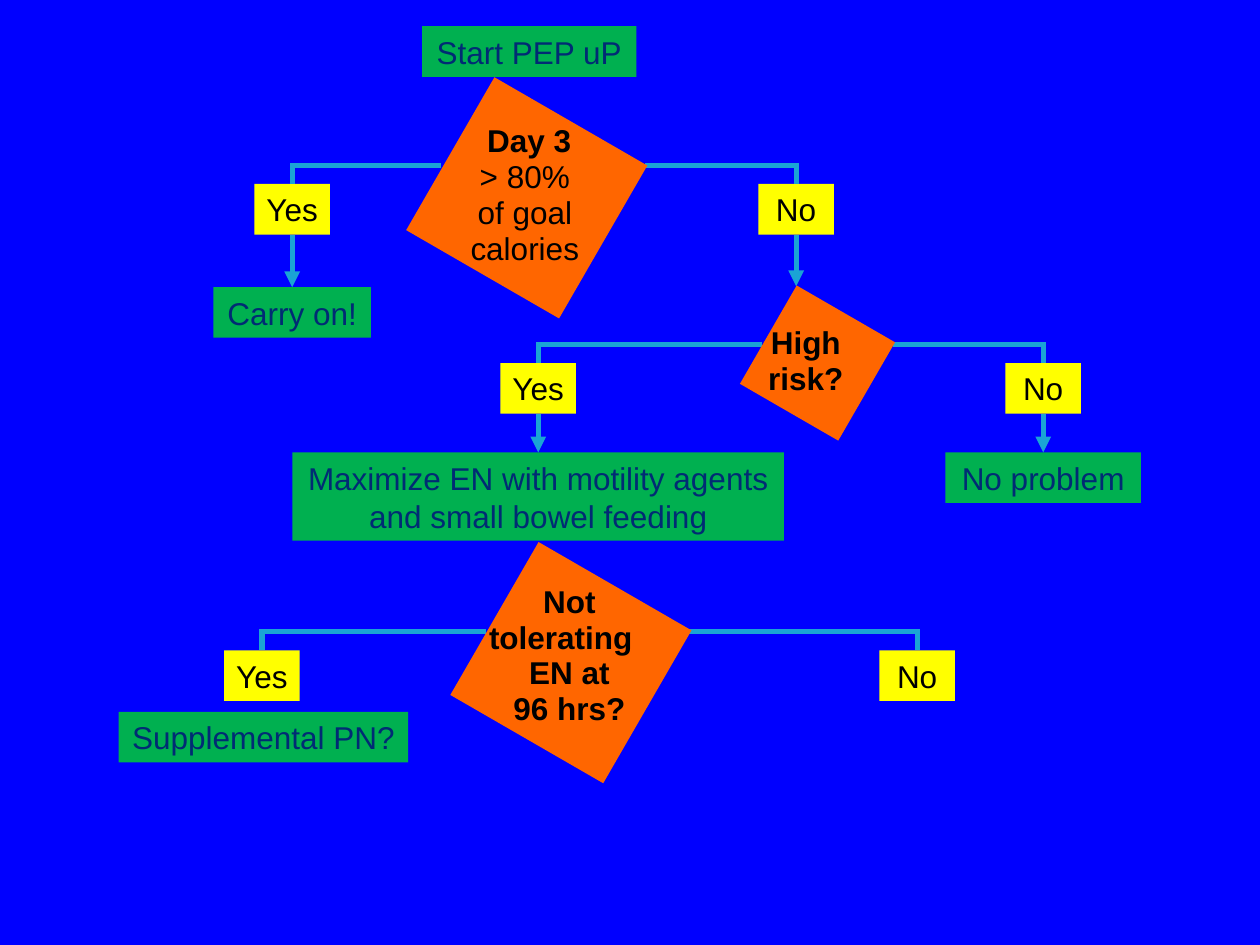
import pptx
import pptx.dml.color
import pptx.enum.shapes
import pptx.enum.text
import pptx.oxml
import pptx.oxml.ns
import pptx.util

Cm, Pt = pptx.util.Cm, pptx.util.Pt
RECTANGLE = pptx.enum.shapes.MSO_SHAPE.RECTANGLE
STRAIGHT = pptx.enum.shapes.MSO_CONNECTOR.STRAIGHT
TOP, BOTTOM = 0, 2

THEME = {
    "background": "0000FF", "step": "00B050", "answer": "FFFF00",
    "decision": "FF6600", "line": "1AA4D5",
    "step_text": "012B74", "text": "000000",
    "font": "Arial", "size": Pt(18), "line_width": Pt(3),
}

# Lengths in centimetres. Steps: centre x, top, width, height, text
STEPS = {
    "start": (10.67, 0.53, 4.32, 1.02, "Start PEP uP"),
    "carry on": (5.89, 5.79, 3.18, 1.02, "Carry on!"),
    "maximize": (10.85, 9.12, 9.91, 1.78,
                 "Maximize EN with motility agents\nand small bowel feeding"),
    "no problem": (21.03, 9.12, 3.94, 1.02, "No problem"),
    "supplement": (5.31, 14.35, 5.84, 1.02, "Supplemental PN?"),
}

# Lines of a decision: text, bold, right indent
# Branches: answer, its centre x, x where the line leaves the decision, next step
DECISIONS = [
    {"centre": (10.62, 3.99), "side": 3.56, "label": (10.67, 3.95, 3.76, 3.53),
     "lines": [("Day 3", True, 0), ("> 80%", False, 0.18),
               ("of goal calories", False, 0)],
     "answer_top": 3.71,
     "branches": [("Yes", 5.89, 8.89, "carry on"), ("No", 16.05, 13, "high risk")]},
    {"centre": (16.48, 7.32), "side": 2.29, "label": (16.51, 7.3, 3.76, 2.01),
     "lines": [("High", True, 0.53), ("risk?", True, 0)],
     "answer_top": 7.32,
     "branches": [("Yes", 10.85, 15.37, "maximize"), ("No", 21.03, 18.01, "no problem")]},
    {"centre": (11.51, 13.36), "side": 3.56, "label": (11.57, 13.23, 4.65, 2.95),
     "lines": [("Not", True, 0.18), ("tolerating", True, 0.53),
               ("EN at", True, 0.18), ("96 hrs?", True, 0)],
     "answer_top": 13.11,
     "branches": [("Yes", 5.28, 9.8, None), ("No", 18.49, 13.89, None)]},
]
ANSWER_WIDTH, ANSWER_HEIGHT = 1.52, 1.02
BRANCH_RISE = 0.38
CORNER_OVERLAP = 0.05
HIGH_RISK_TOP = 5.77


def color(name):
    return pptx.dml.color.RGBColor.from_string(THEME[name])


def style_text(para, text, text_color, bold=False):
    para.text = text
    para.alignment = pptx.enum.text.PP_ALIGN.CENTER
    for name, value in {"name": THEME["font"], "size": THEME["size"], "bold": bold}.items():
        for span in para.runs:
            setattr(span.font, name, value)
    for span in para.runs:
        span.font.color.rgb = color(text_color)


def add_box(page, center_x, top, width, height, fill):
    box = page.shapes.add_shape(
        RECTANGLE, Cm(center_x - width / 2), Cm(top), Cm(width), Cm(height))
    box.shadow.inherit = False
    box.fill.solid()
    box.fill.fore_color.rgb = color(fill)
    box.line.fill.background()
    return box


def add_text_box(page, center_x, top, width, height, fill, text, text_color):
    box = add_box(page, center_x, top, width, height, fill)
    box.text_frame.word_wrap = False
    box.text_frame.vertical_anchor = pptx.enum.text.MSO_ANCHOR.MIDDLE
    style_text(box.text_frame.paragraphs[0], text, text_color)
    return box


def add_line(page, start, end, arrow=False):
    line = page.shapes.add_connector(STRAIGHT, *(Cm(value) for value in (*start, *end)))
    line.line.color.rgb = color("line")
    line.line.width = THEME["line_width"]
    properties = line._element.spPr
    if arrow:
        head = pptx.oxml.parse_xml(
            f'<a:tailEnd {pptx.oxml.ns.nsdecls("a")} type="triangle"/>')
        line.line._get_or_add_ln().append(head)
    properties.append(pptx.oxml.parse_xml(f'<a:effectLst {pptx.oxml.ns.nsdecls("a")}/>'))
    return line


def add_branch(page, top, branch, steps):
    """Draw an answer, the bent line that leads to it and the arrow to its next step."""
    answer, x, leave_x, target = branch
    box = add_text_box(page, x, top, ANSWER_WIDTH, ANSWER_HEIGHT, "answer", answer, "text")
    line_y = top - BRANCH_RISE
    overlap = CORNER_OVERLAP if x > leave_x else -CORNER_OVERLAP
    add_line(page, (leave_x, line_y), (x + overlap, line_y))
    add_line(page, (x, line_y), (x, top)).end_connect(box, TOP)
    if target:
        bottom = top + ANSWER_HEIGHT
        arrow = add_line(page, (x, bottom), (x, HIGH_RISK_TOP), arrow=True)
        arrow.begin_connect(box, BOTTOM)
        if target in steps:
            arrow.end_connect(steps[target], TOP)


def add_decision(page, decision):
    x, y = decision["centre"]
    side = decision["side"]
    add_box(page, x, y - side / 2, side, side, "decision").rotation = 30

    x, y, width, height = decision["label"]
    label = page.shapes.add_textbox(
        Cm(x - width / 2), Cm(y - height / 2), Cm(width), Cm(height))
    frame = label.text_frame
    frame.word_wrap = True
    frame.vertical_anchor = pptx.enum.text.MSO_ANCHOR.MIDDLE
    for index, (text, bold, indent) in enumerate(decision["lines"]):
        para = frame.add_paragraph() if index else frame.paragraphs[0]
        style_text(para, text, "text", bold)
        para.line_spacing = 0.95
        if indent:
            para._p.get_or_add_pPr().set("marR", str(Cm(indent)))


def main():
    deck = pptx.Presentation()
    deck.slide_width, deck.slide_height = Cm(25.4), Cm(19.05)
    page = deck.slides.add_slide(deck.slide_layouts[6])
    page.background.fill.solid()
    page.background.fill.fore_color.rgb = color("background")

    steps = {
        name: add_text_box(page, *place, "step", text, "step_text")
        for name, (*place, text) in STEPS.items()
    }
    for decision in DECISIONS:
        for branch in decision["branches"]:
            add_branch(page, decision["answer_top"], branch, steps)
    for decision in DECISIONS:
        add_decision(page, decision)
    deck.save("out.pptx")


if __name__ == "__main__":
    main()
